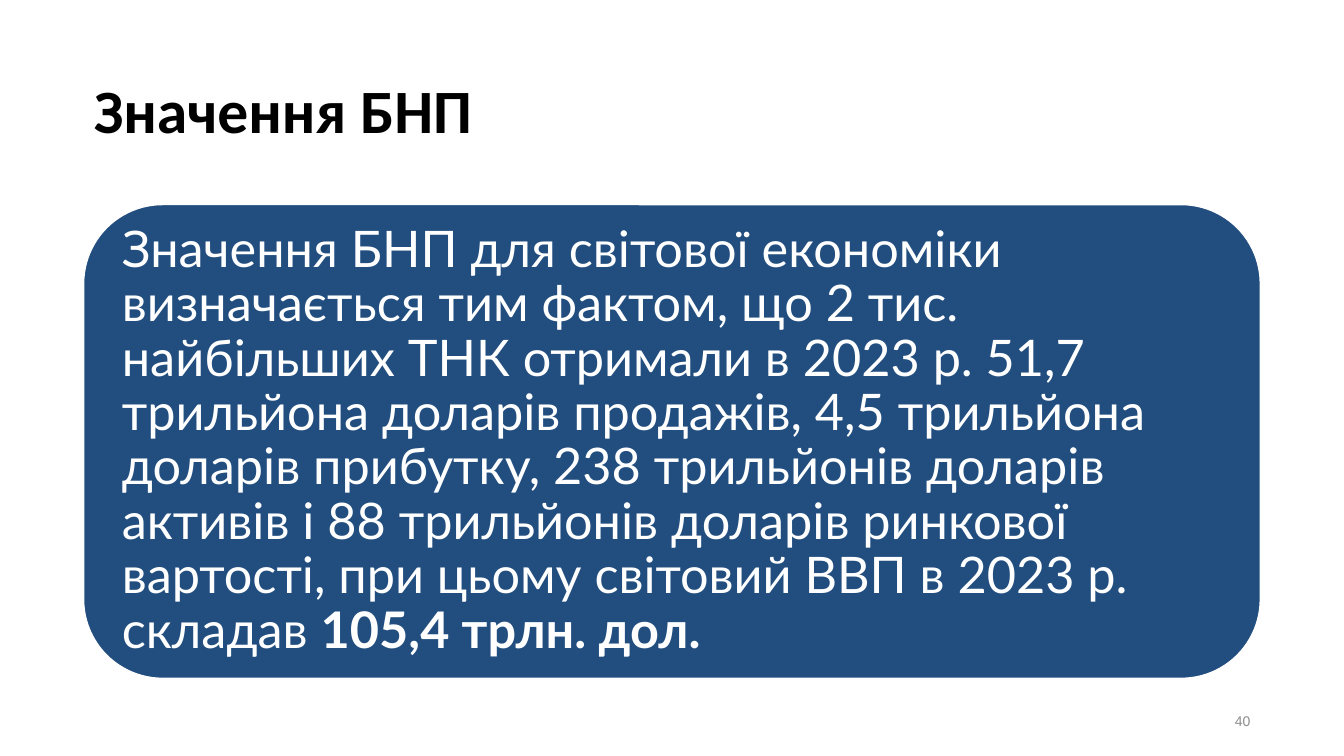
"""Build the slide on the importance of the largest multinationals."""
from pptx import Presentation
from pptx.dml.color import RGBColor
from pptx.enum.shapes import MSO_SHAPE
from pptx.enum.text import MSO_ANCHOR, PP_ALIGN
from pptx.util import Inches, Pt

ROUNDED = MSO_SHAPE.ROUNDED_RECTANGLE
MIDDLE = MSO_ANCHOR.MIDDLE
LEFT, RIGHT = PP_ALIGN.LEFT, PP_ALIGN.RIGHT

TITLE = "Значення БНП"
BODY = [
    ("Значення БНП для світової економіки визначається тим фактом, що 2 тис. "
     "найбільших ТНК отримали в 2023 р. 51,7 трильйона доларів продажів, "
     "4,5 трильйона доларів прибутку, 238 трильйонів доларів активів і "
     "88 трильйонів доларів ринкової вартості, при цьому світовий ВВП "
     "в 2023 р. складав ", False),
    ("105,4 трлн. дол.", True),
]
NUMBER = "40"

WIDTH, HEIGHT = 13.33, 7.5
MARGIN = 0.83
CONTENT = WIDTH - 2 * MARGIN
NUMBER_WIDTH = 3.08
BOXES = {
    "title": (MARGIN, 0.4, CONTENT, 1.45),
    "panel": (MARGIN, 2.03, CONTENT, 4.7),
    "number": (WIDTH - MARGIN - NUMBER_WIDTH, 6.95, NUMBER_WIDTH, 0.4),
}
THEME = {
    "panel": "224E7F",
    "line": "FFFFFF",
    "title": {"name": "Calibri", "size": 44, "color": "000000"},
    "body": {"name": "Lato", "size": 36, "color": "FFFFFF"},
    "number": {"name": "Arial", "size": 10, "color": "8C8C8C"},
}


def box(name):
    """Return the named box as lengths."""
    return [Inches(v) for v in BOXES[name]]


def write(sp, runs, style, align, spacing=1.0, inset=None):
    """Fill a shape with one paragraph of (text, bold) runs."""
    tf = sp.text_frame
    tf.word_wrap = True
    tf.vertical_anchor = MIDDLE
    if inset is not None:
        for side in ("left", "top", "right", "bottom"):
            setattr(tf, f"margin_{side}", Inches(inset))
    p = tf.paragraphs[0]
    p.alignment, p.line_spacing = align, spacing
    for text, bold in runs:
        r = p.add_run()
        r.text = text
        values = {"name": style["name"], "size": Pt(style["size"]), "bold": bold}
        for key, value in values.items():
            setattr(r.font, key, value)
        r.font.color.rgb = RGBColor.from_string(style["color"])


def main():
    """Create and save the slide."""
    prs = Presentation()
    prs.slide_width, prs.slide_height = Inches(WIDTH), Inches(HEIGHT)
    s = prs.slides.add_slide(prs.slide_layouts[5])

    title = s.shapes.title
    title.left, title.top, title.width, title.height = box("title")
    write(title, [(TITLE, True)], THEME["title"], LEFT, 0.9)

    panel = s.shapes.add_shape(ROUNDED, *box("panel"))
    panel.shadow.inherit = False
    panel.fill.solid()
    panel.fill.fore_color.rgb = RGBColor.from_string(THEME["panel"])
    panel.line.color.rgb = RGBColor.from_string(THEME["line"])
    panel.line.width = Pt(1)
    write(panel, BODY, THEME["body"], LEFT, 0.9, 0.15)

    number = s.shapes.add_textbox(*box("number"))
    write(number, [(NUMBER, False)], THEME["number"], RIGHT)

    prs.save("out.pptx")


if __name__ == "__main__":
    main()
